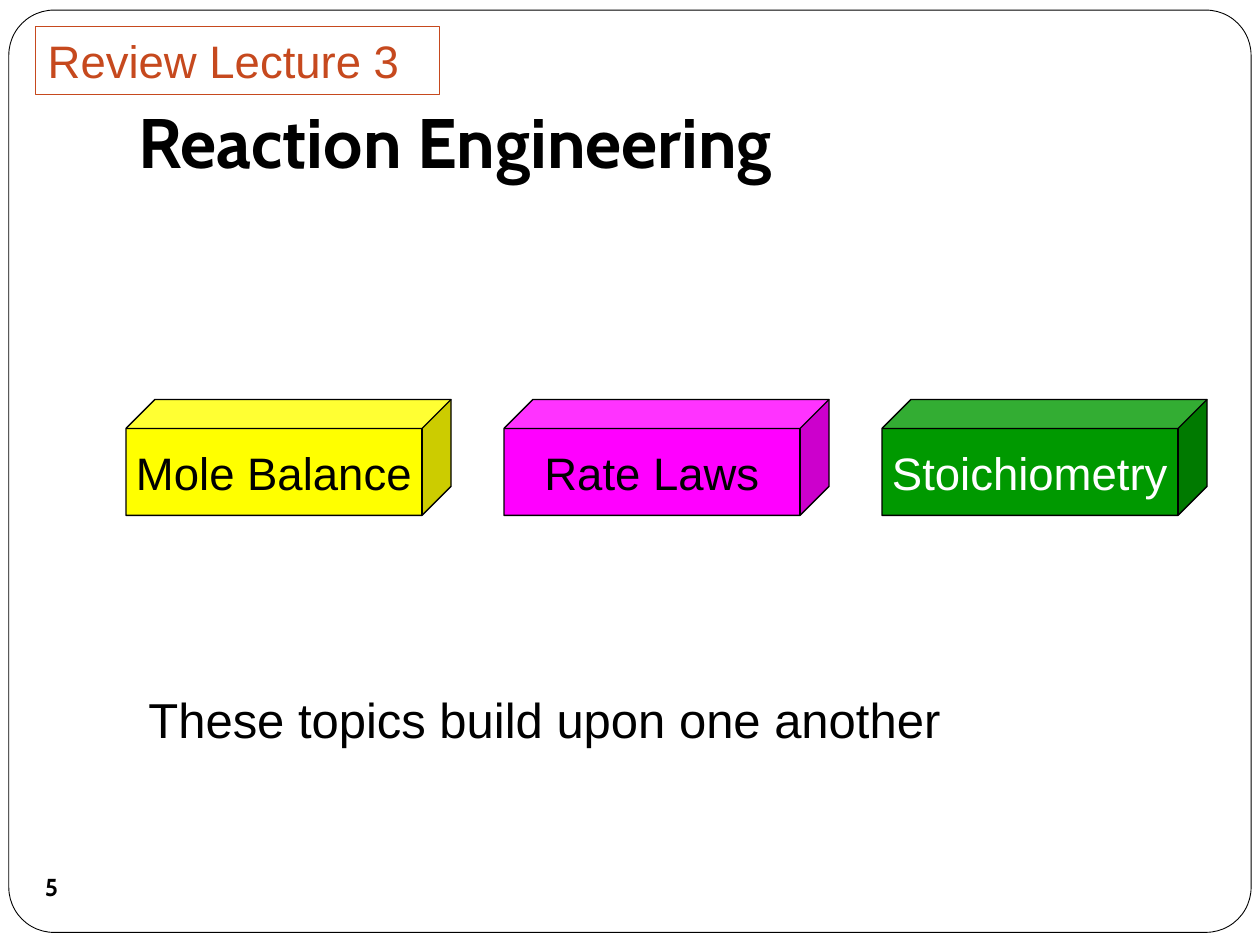
from pptx import Presentation
from pptx import util as u
from pptx.dml.color import RGBColor
from pptx.enum import shapes, text

WIDTH, HEIGHT = 10, 7.5
COLORS = {"white": "FFFFFF", "black": "000000", "rust": "C6491E",
          "yellow": "FFFF00", "magenta": "FF00FF", "green": "009900"}
TOPICS = [("Mole Balance", "yellow", "black"),
          ("Rate Laws", "magenta", "black"),
          ("Stoichiometry", "green", "white")]
FIRST_COLUMN, COLUMN_STEP = 1, 3
MARGINS = (0.1, 0.05, 0.1, 0.05)
SHAPE = shapes.MSO_SHAPE
ANCHOR = text.MSO_ANCHOR
CENTER = text.PP_ALIGN.CENTER


def rgb(name):
    return RGBColor.from_string(COLORS[name])


def write(sp, words, size, font="Arial", color="black", bold=False,
          align=None, anchor=ANCHOR.TOP, margins=MARGINS, wrap=True):
    tf = sp.text_frame
    tf.word_wrap = wrap
    tf.vertical_anchor = anchor
    (tf.margin_left, tf.margin_top,
     tf.margin_right, tf.margin_bottom) = map(u.Inches, margins)
    p = tf.paragraphs[0]
    p.alignment = align
    r = p.add_run()
    r.text = words
    r.font.size, r.font.name, r.font.bold = u.Pt(size), font, bold
    r.font.color.rgb = rgb(color)


def add_box(s, kind, box, fill=None, line=None, weight=0.75, adj=None):
    sp = s.shapes.add_shape(kind, *map(u.Inches, box))
    sp.shadow.inherit = False
    if fill:
        sp.fill.solid()
        sp.fill.fore_color.rgb = rgb(fill)
    else:
        sp.fill.background()
    if line:
        sp.line.color.rgb = rgb(line)
        sp.line.width = u.Pt(weight)
    else:
        sp.line.fill.background()
    if adj is not None:
        sp.adjustments[0] = adj
    return sp


def add_text(s, box, words, size, **fmt):
    write(s.shapes.add_textbox(*map(u.Inches, box)), words, size, **fmt)


def add_topic(s, column, words, fill, color):
    left = FIRST_COLUMN + column * COLUMN_STEP
    sp = add_box(s, SHAPE.CUBE, (left, 3.17, 2.58, 0.92), fill, "black", adj=0.25)
    write(sp, words, 26, color=color, align=CENTER, anchor=ANCHOR.MIDDLE, wrap=False)


def add_page_number(s, number):
    sp = add_box(s, SHAPE.OVAL, (0.16, 6.79, 0.5, 0.5), "white")
    write(sp, number, 14, font="Cabin", bold=True, align=CENTER,
          anchor=ANCHOR.MIDDLE, margins=(0, 0, 0, 0), wrap=False)


def main():
    prs = Presentation()
    prs.slide_width, prs.slide_height = u.Inches(WIDTH), u.Inches(HEIGHT)
    s = prs.slides.add_slide(prs.slide_layouts[6])

    add_box(s, SHAPE.ROUNDED_RECTANGLE, (0.07, 0.08, WIDTH - 0.14, HEIGHT - 0.18),
            "white", "black", weight=0.5, adj=0.049)
    add_text(s, (FIRST_COLUMN, 0.3, 8.5, 1.25), "Reaction Engineering", 40,
             font="Cabin", bold=True, anchor=ANCHOR.BOTTOM,
             margins=(0.1, 0.05, 0.1, 0.1))
    add_page_number(s, "5")
    add_text(s, (1.08, 5.42, 7.18, 0.57), "These topics build upon one another", 28)
    for column, topic in enumerate(TOPICS):
        add_topic(s, column, *topic)
    label = add_box(s, SHAPE.RECTANGLE, (0.28, 0.21, 3.21, 0.54), line="rust")
    write(label, "Review Lecture 3", 26, color="rust", align=text.PP_ALIGN.LEFT)

    prs.save("out.pptx")


if __name__ == "__main__":
    main()
